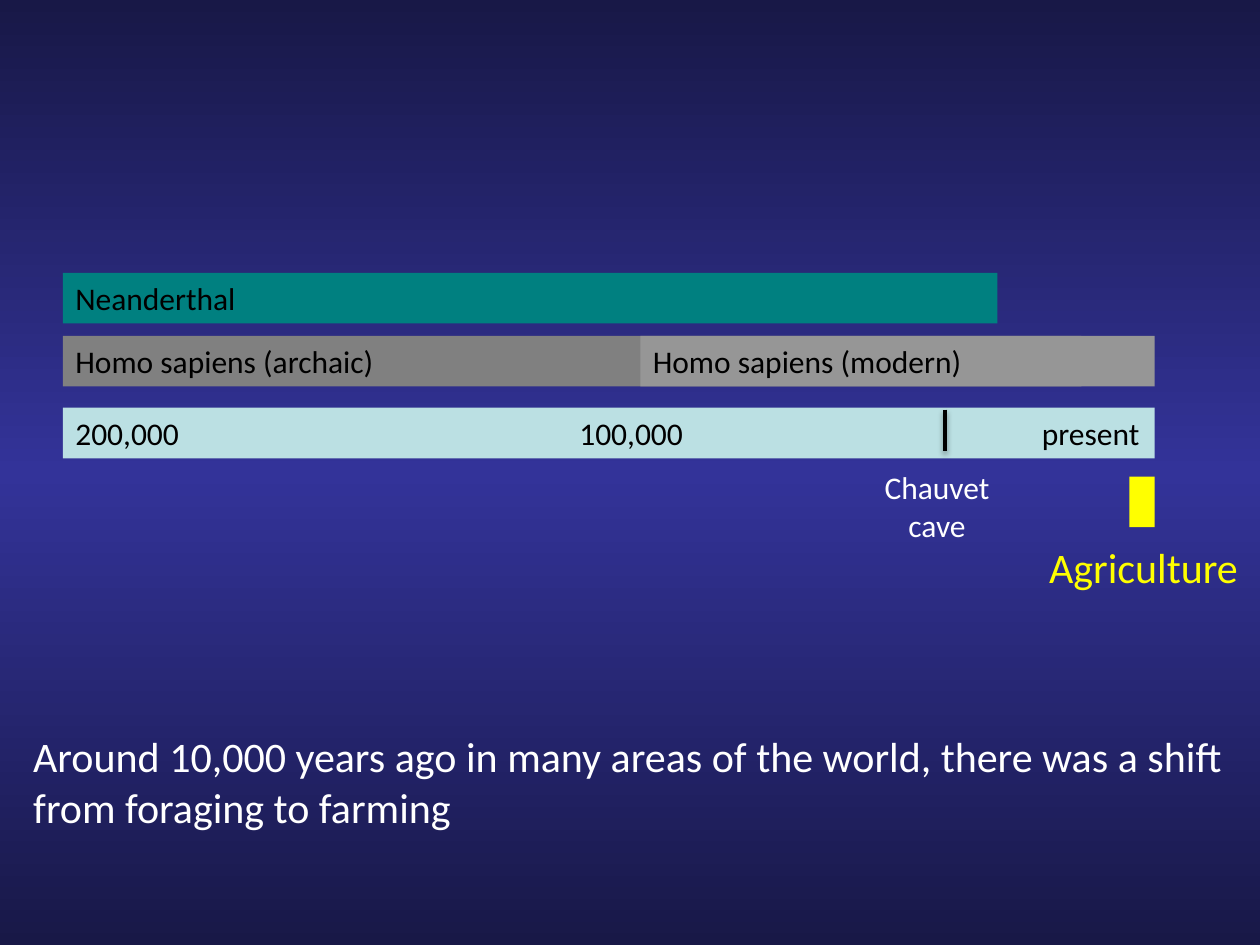
from copy import deepcopy

from lxml import etree
from pptx import Presentation
from pptx import util as u
from pptx.dml.color import RGBColor
from pptx.enum import shapes, text
from pptx.oxml.ns import qn

COLORS = {
    "edge": "181847", "middle": "333399", "black": "000000", "white": "FFFFFF",
    "neanderthal": "008080", "archaic": "808080", "modern": "969696",
    "scale": "BBE0E3", "agriculture": "FFFF00",
}
FONT = "Calibri"
LEFT, RIGHT, BAR_H = 1.27, 23.28, 1.02  # timeline extent and bar height, cm


def color(name):
    return RGBColor.from_string(COLORS[name])


def set_background(s):
    """Vertical gradient, dark at both ends."""
    fill = s.background.fill
    fill.gradient()
    fill.gradient_angle = 90
    stop_list = next(s.element.iter(qn("a:gsLst")))
    stop_list.append(deepcopy(stop_list[-1]))
    stops = zip(fill.gradient_stops, (0, 0.5, 1), ("edge", "middle", "edge"))
    for stop, position, name in stops:
        stop.position = position
        stop.color.rgb = color(name)


def write(sp, content, name, size, align=text.PP_ALIGN.LEFT):
    tf = sp.text_frame
    tf.text = content
    for p in tf.paragraphs:
        p.alignment = align
        for r in p.runs:
            r.font.name, r.font.size = FONT, u.Pt(size)
            r.font.color.rgb = color(name)


def add_bar(s, left, top, right, fill, content=""):
    sp = s.shapes.add_shape(shapes.MSO_SHAPE.RECTANGLE, u.Cm(left), u.Cm(top),
                            u.Cm(right - left), u.Cm(BAR_H))
    sp.shadow.inherit = False
    sp.fill.solid()
    sp.fill.fore_color.rgb = color(fill)
    sp.line.fill.background()
    if content:
        write(sp, content, "black", 18)
    return sp


def add_label(s, left, top, width, height, content, name, size,
              align=text.PP_ALIGN.LEFT):
    sp = s.shapes.add_textbox(u.Cm(left), u.Cm(top), u.Cm(width), u.Cm(height))
    sp.text_frame.word_wrap = False
    write(sp, content, name, size, align)


def set_tabs(p, stops):
    """Tab stops as (cm, alignment) pairs."""
    tabs = etree.SubElement(p._p.get_or_add_pPr(), qn("a:tabLst"))
    for position, align in stops:
        etree.SubElement(tabs, qn("a:tab"), pos=str(u.Cm(position)), algn=align)


def add_marker(s, x, top, bottom):
    line = s.shapes.add_connector(shapes.MSO_CONNECTOR.STRAIGHT,
                                  u.Cm(x), u.Cm(top), u.Cm(x), u.Cm(bottom))
    line.line.color.rgb = color("black")
    line.line.width = u.Pt(2)
    # Soft shadow below the marker
    effects = etree.SubElement(line._element.spPr, qn("a:effectLst"))
    shadow = etree.SubElement(
        effects, qn("a:outerShdw"), blurRad=str(u.Pt(3.1)), dist=str(u.Pt(1.6)),
        dir="5400000", rotWithShape="0")
    rgb = etree.SubElement(shadow, qn("a:srgbClr"), val=COLORS["black"])
    etree.SubElement(rgb, qn("a:alpha"), val="38000")


def main():
    prs = Presentation()
    prs.slide_width, prs.slide_height = u.Cm(25.4), u.Cm(19.05)
    s = prs.slides.add_slide(prs.slide_layouts[6])
    set_background(s)

    # Human species
    add_bar(s, LEFT, 6.77, 21.8, "archaic", "Homo sapiens (archaic)")
    add_bar(s, LEFT, 5.5, 20.11, "neanderthal", "Neanderthal")
    add_bar(s, 12.91, 6.77, RIGHT, "modern", "Homo sapiens (modern)")

    # Time scale
    scale = add_bar(s, LEFT, 8.22, RIGHT, "scale", "200,000\t100,000\tpresent")
    set_tabs(scale.text_frame.paragraphs[0], [(10.16, "l"), (21.45, "r")])

    # Events
    add_bar(s, 22.77, 9.61, RIGHT, "agriculture")
    add_label(s, 20.9, 10.8, 4.5, 1.28, "Agriculture", "agriculture", 24)
    add_marker(s, 19.05, 8.26, 9.1)
    add_label(s, 17.57, 9.31, 2.64, 1.8, "Chauvet\ncave", "white", 18,
              text.PP_ALIGN.CENTER)

    # Conclusion
    add_label(s, 0.42, 14.61, 24.71, 2.31,
              "Around 10,000 years ago in many areas of the world, there was a shift\n"
              "from foraging to farming", "white", 24)

    prs.save("out.pptx")


if __name__ == "__main__":
    main()
